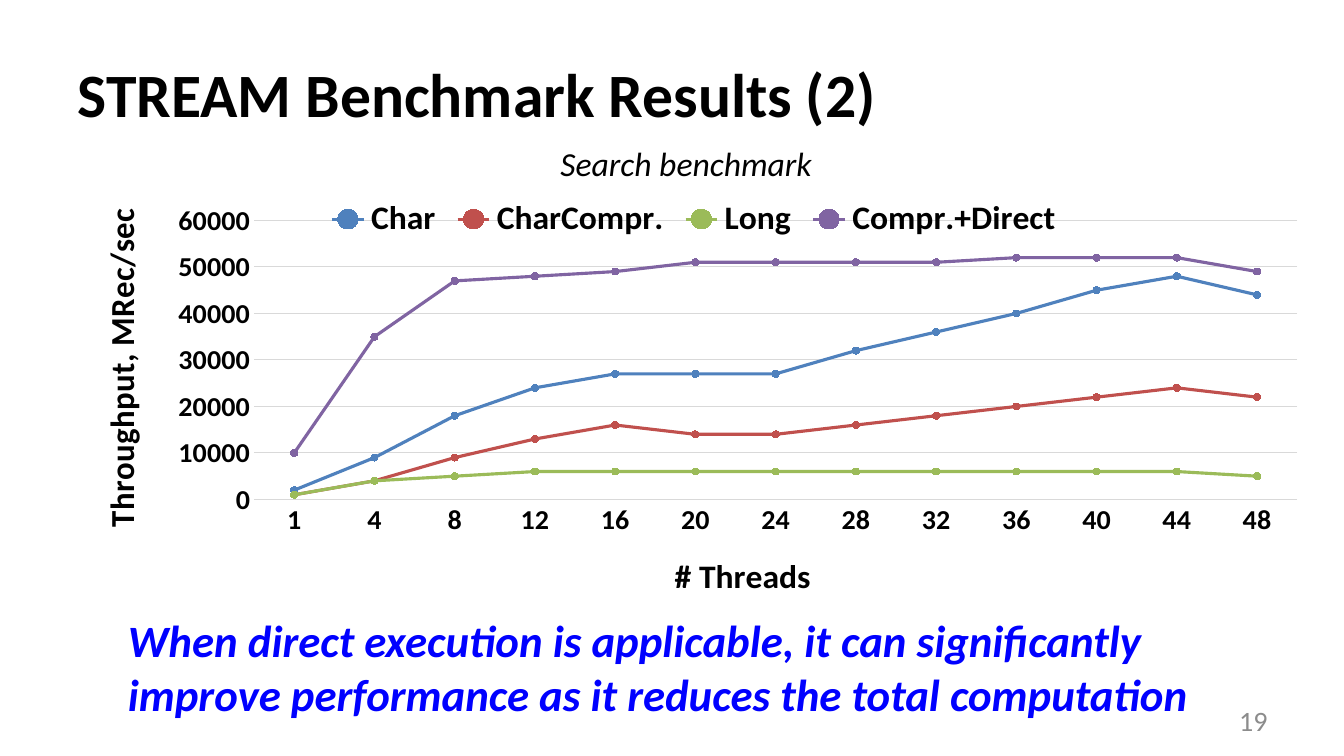
from lxml import etree
from pptx import Presentation
from pptx.chart.data import CategoryChartData
from pptx.dml.color import RGBColor
from pptx.enum.chart import XL_CHART_TYPE, XL_LEGEND_POSITION, XL_MARKER_STYLE, XL_TICK_MARK
from pptx.enum.text import MSO_ANCHOR, PP_ALIGN
from pptx.oxml.ns import qn
from pptx.util import Inches, Pt

BLACK = RGBColor(0x00, 0x00, 0x00)
BLUE = RGBColor(0x00, 0x00, 0xFF)
GRAY = RGBColor(0x8C, 0x8C, 0x8C)
GRID_GRAY = RGBColor(0xD9, 0xD9, 0xD9)
FONT = "Calibri"

THREADS = ["1"] + [str(count) for count in range(4, 49, 4)]
# Name, line colour, throughput in thousands of MRec/sec
SERIES = [
    ("Char", RGBColor(0x4F, 0x81, 0xBD), [2, 9, 18, 24, 27, 27, 27, 32, 36, 40, 45, 48, 44]),
    ("CharCompr.", RGBColor(0xC0, 0x50, 0x4D), [1, 4, 9, 13, 16, 14, 14, 16, 18, 20, 22, 24, 22]),
    ("Long", RGBColor(0x9B, 0xBB, 0x59), [1, 4, 5, 6, 6, 6, 6, 6, 6, 6, 6, 6, 5]),
    ("Compr.+Direct", RGBColor(0x80, 0x64, 0xA2),
     [10, 35, 47, 48, 49, 51, 51, 51, 51, 52, 52, 52, 49]),
]


def set_font(font, size, color=BLACK, bold=False, italic=False):
    font.name = FONT
    font.size = Pt(size)
    font.color.rgb = color
    font.bold = bold
    font.italic = italic


def place_in_chart(element, position, **settings):
    """Give a chart element a manual layout, as shares of the chart's size."""
    layout = element.find(qn("c:layout"))
    if layout is None:
        layout = etree.Element(qn("c:layout"))
        element.insert(position, layout)
    manual = etree.SubElement(layout, qn("c:manualLayout"))
    for name, value in settings.items():
        etree.SubElement(manual, qn(f"c:{name}")).set("val", str(value))


presentation = Presentation()
presentation.slide_width = Inches(13.33)
presentation.slide_height = Inches(7.5)
slide = presentation.slides.add_slide(presentation.slide_layouts[5])

# Title
title = slide.shapes.title
title.left, title.top, title.width, title.height = (Inches(n) for n in (0.67, 0.3, 12, 1.25))
title.text_frame.text = "STREAM Benchmark Results (2)"
title.text_frame.vertical_anchor = MSO_ANCHOR.MIDDLE
paragraph = title.text_frame.paragraphs[0]
paragraph.alignment = PP_ALIGN.LEFT
set_font(paragraph.font, 44, bold=True)

# Subtitle, conclusion and slide number
TEXTS = [
    ("Search benchmark", (5.46, 1.37, 2.83, 0.5), PP_ALIGN.LEFT, MSO_ANCHOR.TOP,
     dict(size=24, italic=True)),
    ("When direct execution is applicable, it can significantly improve performance "
     "as it reduces the total computation", (1.17, 6.03, 11.36, 1.18), PP_ALIGN.LEFT,
     MSO_ANCHOR.TOP, dict(size=32, color=BLUE, bold=True, italic=True)),
    ("19", (9.56, 6.95, 3.11, 0.4), PP_ALIGN.RIGHT, MSO_ANCHOR.MIDDLE,
     dict(size=20, color=GRAY)),
]
for text, box, alignment, anchor, style in TEXTS:
    text_frame = slide.shapes.add_textbox(*(Inches(n) for n in box)).text_frame
    text_frame.word_wrap = True
    text_frame.vertical_anchor = anchor
    text_frame.text = text
    paragraph = text_frame.paragraphs[0]
    paragraph.alignment = alignment
    set_font(paragraph.font, **style)

# Throughput chart
chart_data = CategoryChartData()
chart_data.categories = THREADS
for name, color, thousands in SERIES:
    chart_data.add_series(name, [value * 1000 for value in thousands])
chart = slide.shapes.add_chart(
    XL_CHART_TYPE.LINE_MARKERS, Inches(0.67), Inches(1.84), Inches(12.42), Inches(4.19), chart_data
).chart
chart.has_title = False
set_font(chart.font, 10)
chart.has_legend = True
chart.legend.position = XL_LEGEND_POSITION.TOP
chart.legend.include_in_layout = False
set_font(chart.legend.font, 24, bold=True)

plot = chart.plots[0]
plot.vary_by_categories = False
for series, (name, color, thousands) in zip(plot.series, SERIES):
    series.smooth = False
    series.format.line.color.rgb = color
    series.format.line.width = Pt(2.25)
    series.marker.style = XL_MARKER_STYLE.CIRCLE
    series.marker.size = 5
    series.marker.format.fill.solid()
    series.marker.format.fill.fore_color.rgb = color
    series.marker.format.line.color.rgb = color
place_in_chart(chart.plots[0]._element.getparent(), 0, layoutTarget="inner", xMode="edge",
               yMode="edge", x=0.149, y=0.085, w=0.833, h=0.677)

# Axes
AXES = [
    (chart.category_axis, "# Threads", 0.48, 0.88),
    (chart.value_axis, "Throughput, MRec/sec", 0.02, 0.06),
]
for axis, text, x, y in AXES:
    axis.major_tick_mark = axis.minor_tick_mark = XL_TICK_MARK.NONE
    set_font(axis.tick_labels.font, 20, bold=True)
    axis.axis_title.text_frame.text = text
    set_font(axis.axis_title.text_frame.paragraphs[0].font, 24, bold=True)
    place_in_chart(axis.axis_title._element, 1, xMode="edge", yMode="edge", x=x, y=y)

chart.value_axis.minimum_scale = 0
chart.value_axis.maximum_scale = 60000
chart.value_axis.major_unit = 10000
chart.value_axis.format.line.fill.background()
for line in (chart.category_axis.format.line, chart.value_axis.major_gridlines.format.line):
    line.color.rgb = GRID_GRAY
    line.width = Pt(0.75)

presentation.save("out.pptx")
